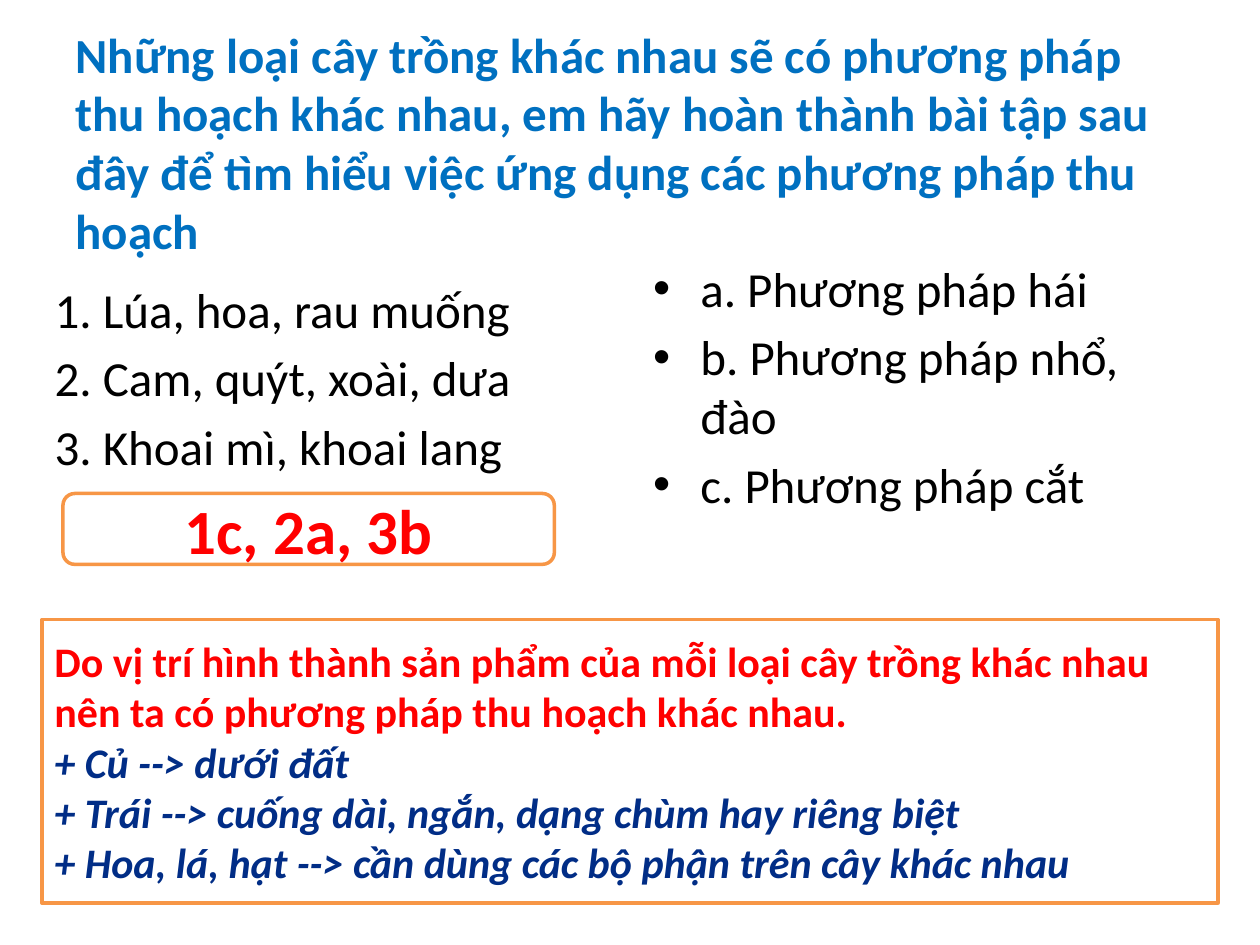
import pptx
import pptx.dml.color
import pptx.enum.shapes
import pptx.enum.text
import pptx.util
from dataclasses import dataclass
from lxml import etree

ANCHOR = pptx.enum.text.MSO_ANCHOR
ALIGN = pptx.enum.text.PP_ALIGN
SHAPE = pptx.enum.shapes.MSO_SHAPE
COLUMNS, ROWS = 120, 90


@dataclass(frozen=True)
class Theme:
    font: str = "Calibri"
    heading: str = "0070C0"
    text: str = "000000"
    answer: str = "FF0000"
    border: str = "F79646"
    paper: str = "FFFFFF"
    detail: tuple = ("012D86", "0E2557")
    body_size: int = 28
    answer_size: int = 36
    note_size: int = 24
    border_width: int = 2


@dataclass(frozen=True)
class Area:
    """A place on the grid, in columns and rows."""
    column: float
    row: float
    columns: float
    rows: float


@dataclass(frozen=True)
class Style:
    size: int
    colors: tuple
    bold: bool = False
    italic: bool = False


@dataclass(frozen=True)
class Line:
    text: str
    style: Style


THEME = Theme()
HEADING = Style(THEME.body_size, (THEME.heading,), bold=True)
ITEM = Style(THEME.body_size, (THEME.text,))
ANSWER = Style(THEME.answer_size, (THEME.answer,), bold=True)
REASON = Style(THEME.note_size, (THEME.answer,), bold=True)
DETAIL = Style(THEME.note_size, THEME.detail, bold=True, italic=True)

TITLE = [Line(
    "Những loại cây trồng khác nhau sẽ có phương pháp thu hoạch khác nhau, "
    "em hãy hoàn thành bài tập sau đây để tìm hiểu việc ứng dụng các "
    "phương pháp thu hoạch", HEADING)]
CROPS = [Line(text, ITEM) for text in (
    "1. Lúa, hoa, rau muống",
    "2. Cam, quýt, xoài, dưa",
    "3. Khoai mì, khoai lang")]
METHODS = [Line(text, ITEM) for text in (
    "a. Phương pháp hái",
    "b. Phương pháp nhổ, đào",
    "c. Phương pháp cắt")]
ANSWERS = [Line("1c, 2a, 3b", ANSWER)]
EXPLANATION = [
    Line("Do vị trí hình thành sản phẩm của mỗi loại cây trồng khác nhau "
         "nên ta có phương pháp thu hoạch khác nhau.", REASON),
    Line("+ Củ --> dưới đất", DETAIL),
    Line("+ Trái --> cuống dài, ngắn, dạng chùm hay riêng biệt", DETAIL),
    Line("+ Hoa, lá, hạt --> cần dùng các bộ phận trên cây khác nhau", DETAIL),
]


def rgb(value: str):
    return pptx.dml.color.RGBColor.from_string(value)


def place(box, area: Area, deck) -> None:
    box.left = round(deck.slide_width * area.column / COLUMNS)
    box.top = round(deck.slide_height * area.row / ROWS)
    box.width = round(deck.slide_width * area.columns / COLUMNS)
    box.height = round(deck.slide_height * area.rows / ROWS)


def format_span(span, style: Style) -> None:
    font = span.font
    font.name, font.size = THEME.font, pptx.util.Pt(style.size)
    font.bold, font.italic = style.bold, style.italic
    if len(style.colors) == 1:
        font.fill.solid()
        font.fill.fore_color.rgb = rgb(style.colors[0])
        return
    font.fill.gradient()
    font.fill.gradient_angle = 0
    for stop, color in zip(font.fill.gradient_stops, style.colors):
        stop.color.rgb = rgb(color)


def write(box, lines: list[Line], anchor, align=ALIGN.LEFT) -> None:
    frame = box.text_frame
    frame.word_wrap = True
    frame.auto_size = pptx.enum.text.MSO_AUTO_SIZE.NONE
    frame.vertical_anchor = anchor
    for number, line in enumerate(lines):
        para = frame.add_paragraph() if number else frame.paragraphs[0]
        para.alignment = align
        span = para.add_run()
        span.text = line.text
        format_span(span, line.style)


def remove_bullets(box) -> None:
    for para in box.text_frame.paragraphs:
        properties = para._p.get_or_add_pPr()
        properties.set("marL", "0")
        properties.set("indent", "0")
        etree.SubElement(properties, pptx.oxml.ns.qn("a:buNone"))


def add_panel(page, kind, area: Area, deck):
    panel = page.shapes.add_shape(kind, 0, 0, 0, 0)
    place(panel, area, deck)
    panel.shadow.inherit = False
    panel.fill.solid()
    panel.fill.fore_color.rgb = rgb(THEME.paper)
    panel.line.color.rgb = rgb(THEME.border)
    panel.line.width = pptx.util.Pt(THEME.border_width)
    return panel


def main() -> None:
    deck = pptx.Presentation()
    deck.slide_width = pptx.util.Inches(10)
    deck.slide_height = pptx.util.Inches(7.5)
    page = deck.slides.add_slide(deck.slide_layouts.get_by_name("Two Content"))
    title, crops, methods = page.placeholders

    for box, area, lines, anchor in (
        (title, Area(6, 6, 108, 15), TITLE, ANCHOR.MIDDLE),
        (crops, Area(4, 26, 53, 59.4), CROPS, ANCHOR.TOP),
        (methods, Area(61, 24, 53, 59.4), METHODS, ANCHOR.TOP),
    ):
        place(box, area, deck)
        write(box, lines, anchor)
    remove_bullets(crops)

    answer = add_panel(page, SHAPE.ROUNDED_RECTANGLE, Area(6, 47, 46.8, 6.75), deck)
    write(answer, ANSWERS, ANCHOR.MIDDLE, ALIGN.CENTER)
    explanation = add_panel(page, SHAPE.RECTANGLE, Area(4, 59, 112, 27), deck)
    write(explanation, EXPLANATION, ANCHOR.MIDDLE)

    deck.save("out.pptx")


if __name__ == "__main__":
    main()
